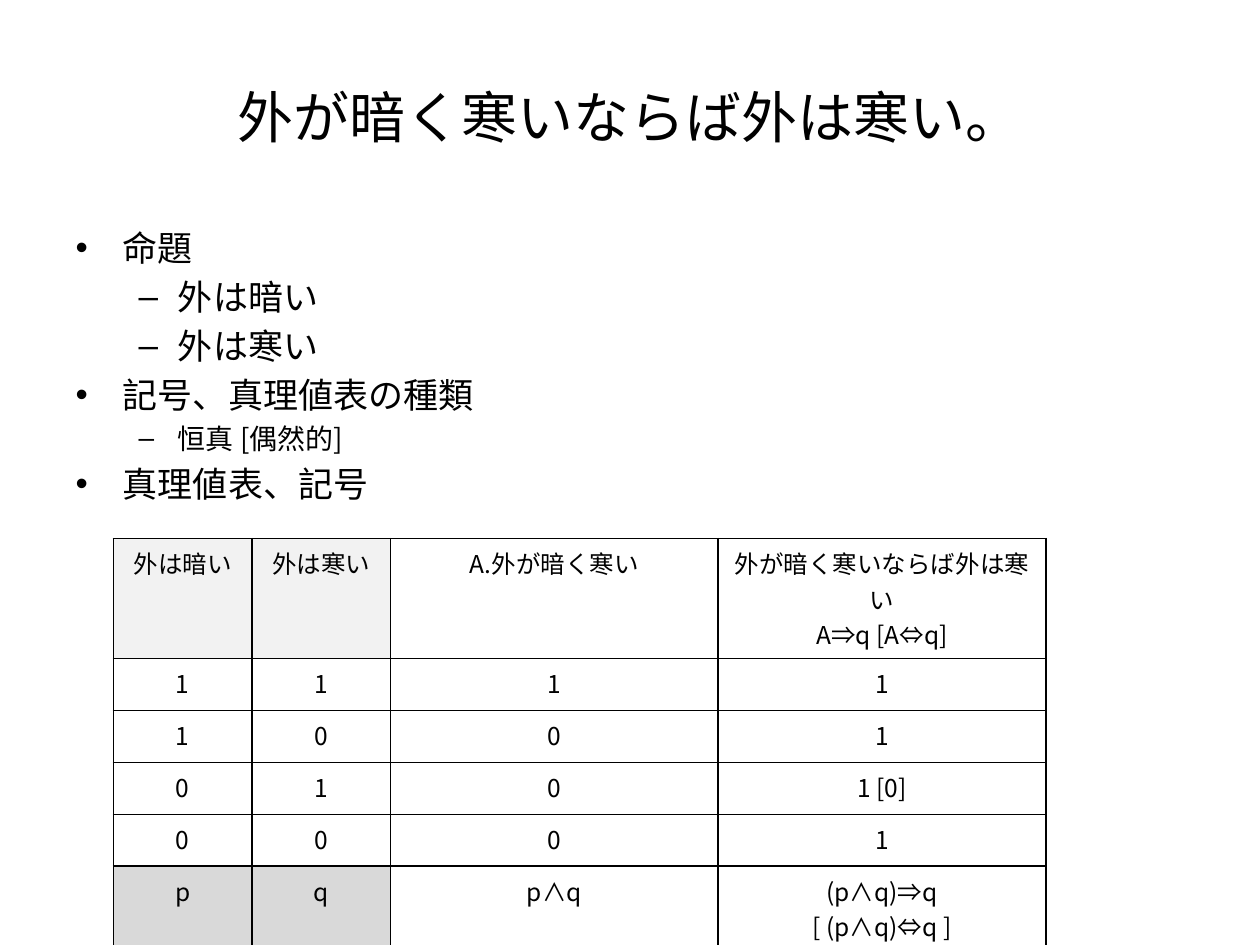
from lxml import etree
from pptx import Presentation
from pptx import util as u
from pptx.dml.color import RGBColor
from pptx.enum import text
from pptx.oxml import ns

INK = RGBColor(0x00, 0x00, 0x00)
PALE = RGBColor(0xF2, 0xF2, 0xF2)
GREY = RGBColor(0xD9, 0xD9, 0xD9)

HEADLINE = "外が暗く寒いならば外は寒い。"
OUTLINE = [  # level, size, wording
    (0, 20, "命題"),
    (1, 20, "外は暗い"),
    (1, 20, "外は寒い"),
    (0, 20, "記号、真理値表の種類"),
    (1, 16, "恒真 [偶然的]"),
    (0, 20, "真理値表、記号"),
]
TRUTH_ROWS = [
    ["外は暗い", "外は寒い", "A.外が暗く寒い", "外が暗く寒いならば外は寒い\nA⇒q [A⇔q]"],
    ["1", "1", "1", "1"],
    ["1", "0", "0", "1"],
    ["0", "1", "0", "1 [0]"],
    ["0", "0", "0", "1"],
    ["p", "q", "p∧q", "(p∧q)⇒q\n[ (p∧q)⇔q ]"],
]
PREMISE_FILLS = {0: PALE, len(TRUTH_ROWS) - 1: GREY}
PREMISE_COLUMNS = 2


class LogicSlide:
    """Slide whose positions and sizes are shares of its width and height."""

    typeface = "Noto Sans CJK JP"

    def __init__(self, deck):
        self.width, self.height = deck.slide_width, deck.slide_height
        self.slide = deck.slides.add_slide(deck.slide_layouts[1])

    def box(self, left, top, width, height):
        return {
            "left": round(left * self.width),
            "top": round(top * self.height),
            "width": round(width * self.width),
            "height": round(height * self.height),
        }

    def place(self, holder, *shares):
        for side, length in self.box(*shares).items():
            setattr(holder, side, length)

    def add_wording(self, paragraph, wording, size):
        run = paragraph.add_run()
        run.text = wording
        for name, value in {"size": u.Pt(size), "name": self.typeface, "bold": False}.items():
            setattr(run.font, name, value)
        run.font.color.rgb = INK
        properties = run._r.get_or_add_rPr()
        etree.SubElement(properties, ns.qn("a:ea"), typeface=self.typeface)

    def title(self, wording, size, *shares):
        heading = self.slide.shapes.title
        self.place(heading, *shares)
        heading.text_frame.vertical_anchor = text.MSO_ANCHOR.MIDDLE
        paragraph = heading.text_frame.paragraphs[0]
        paragraph.alignment = text.PP_ALIGN.CENTER
        self.add_wording(paragraph, wording, size)

    def bullets(self, points, *shares):
        body = self.slide.placeholders[1]
        self.place(body, *shares)
        frame = body.text_frame
        for index, (level, size, wording) in enumerate(points):
            paragraph = frame.add_paragraph() if index else frame.paragraphs[0]
            paragraph.level = level
            self.add_wording(paragraph, wording, size)

    def table(self, rows, column_shares, size, *shares):
        frame = self.slide.shapes.add_table(len(rows), len(column_shares), **self.box(*shares))
        grid = frame.table
        grid.first_row = grid.horz_banding = False
        for column, share in zip(grid.columns, column_shares):
            column.width = round(share * self.width)
        for r, row in enumerate(rows):
            for c, wording in enumerate(row):
                fill = PREMISE_FILLS.get(r) if c < PREMISE_COLUMNS else None
                self.cell(grid.cell(r, c), wording, size, fill)

    def cell(self, cell, wording, size, fill):
        frame = cell.text_frame
        for index, line in enumerate(wording.split("\n")):
            paragraph = frame.add_paragraph() if index else frame.paragraphs[0]
            paragraph.alignment = text.PP_ALIGN.CENTER
            self.add_wording(paragraph, line, size)
        self.borders(cell)
        if fill is None:
            cell.fill.background()
        else:
            cell.fill.solid()
            cell.fill.fore_color.rgb = fill

    def borders(self, cell, points=1):
        properties = cell._tc.get_or_add_tcPr()
        for side in ("lnL", "lnR", "lnT", "lnB"):
            line = etree.SubElement(properties, ns.qn(f"a:{side}"), w=str(u.Pt(points)))
            solid = etree.SubElement(line, ns.qn("a:solidFill"))
            etree.SubElement(solid, ns.qn("a:srgbClr"), val=str(INK))


def main():
    deck = Presentation()
    deck.slide_width, deck.slide_height = u.Inches(10), u.Inches(7.5)
    page = LogicSlide(deck)
    page.title(HEADLINE, 32, 0.05, 0.04, 0.9, 1 / 6)
    page.bullets(OUTLINE, 0.05, 7 / 30, 0.9, 0.66)
    page.table(TRUTH_ROWS, [0.11, 0.11, 0.26, 0.26], 14, 0.09, 0.57, 0.74, 0.33)
    deck.save("out.pptx")


if __name__ == "__main__":
    main()
